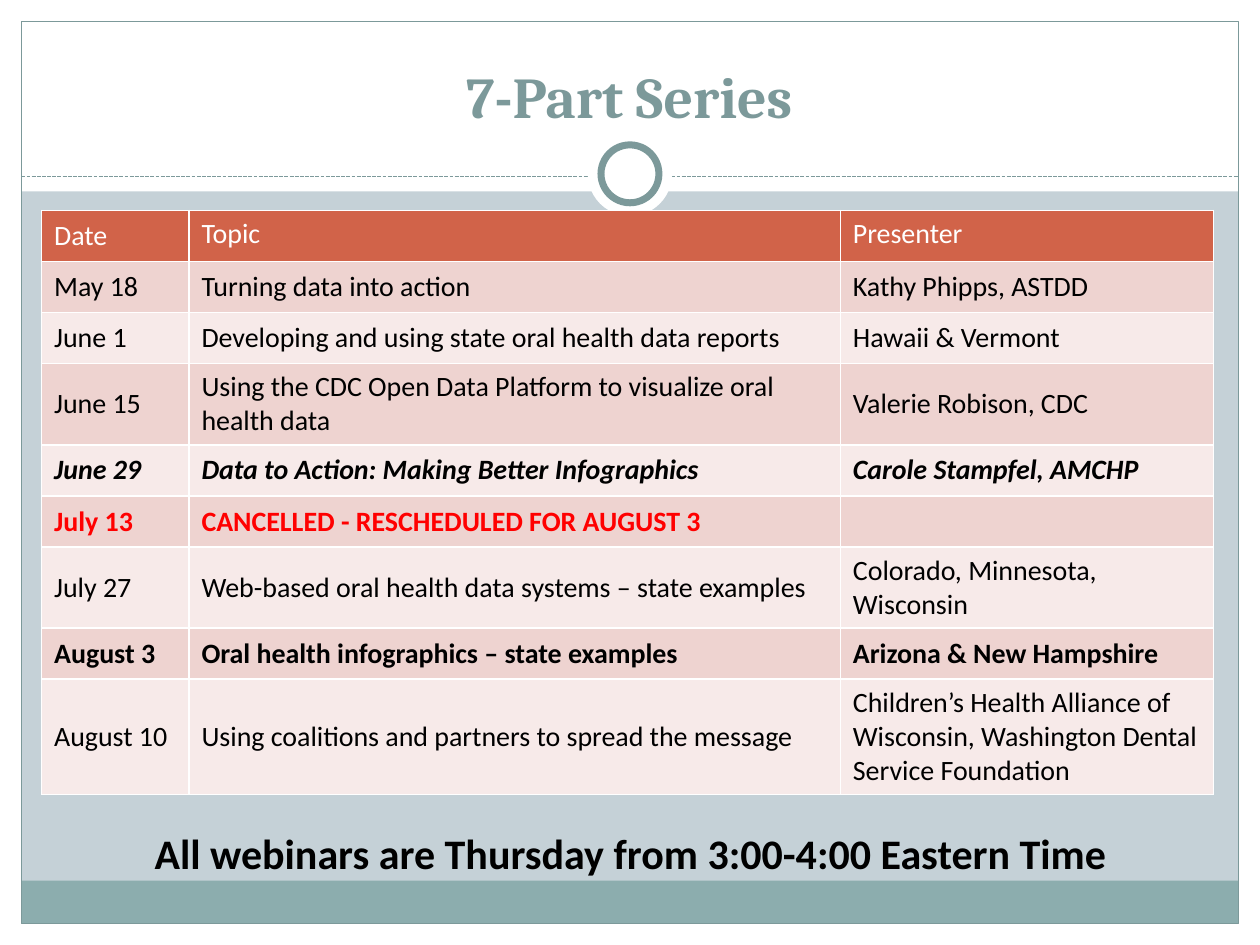
from lxml import etree
from pptx import Presentation
from pptx.dml.color import RGBColor
from pptx.enum.dml import MSO_LINE
from pptx.enum.shapes import MSO_CONNECTOR, MSO_SHAPE
from pptx.enum.text import MSO_ANCHOR, MSO_AUTO_SIZE, PP_ALIGN
from pptx.oxml import parse_xml
from pptx.oxml.ns import nsdecls, qn
from pptx.util import Inches, Pt

RECT, OVAL = MSO_SHAPE.RECTANGLE, MSO_SHAPE.OVAL
STRAIGHT, DASH = MSO_CONNECTOR.STRAIGHT, MSO_LINE.SQUARE_DOT
MIDDLE, BOTTOM, TOP = MSO_ANCHOR.MIDDLE, MSO_ANCHOR.BOTTOM, MSO_ANCHOR.TOP
CENTER, GROW = PP_ALIGN.CENTER, MSO_AUTO_SIZE.SHAPE_TO_FIT_TEXT

WHITE = RGBColor(0xFF, 0xFF, 0xFF)
BLACK = RGBColor(0, 0, 0)
RED = RGBColor(0xFF, 0, 0)
MIST = RGBColor(0xC5, 0xD1, 0xD7)
TEAL = RGBColor(0x8C, 0xAD, 0xAE)
SLATE = RGBColor(0x7C, 0x99, 0x9A)
RUST = RGBColor(0xD1, 0x63, 0x49)
ROSE = RGBColor(0xEE, 0xD3, 0xD0)
BLUSH = RGBColor(0xF7, 0xEA, 0xE9)

HEADS = ("Date", "Topic", "Presenter")
# Each row: date, topic, presenter, colour, bold, italic
ROWS = (
    ("May 18", "Turning data into action", "Kathy Phipps, ASTDD",
     BLACK, False, False),
    ("June 1", "Developing and using state oral health data reports",
     "Hawaii & Vermont", BLACK, False, False),
    ("June 15",
     "Using the CDC Open Data Platform to visualize oral health data",
     "Valerie Robison, CDC", BLACK, False, False),
    ("June 29", "Data to Action: Making Better Infographics",
     "Carole Stampfel, AMCHP", BLACK, True, True),
    ("July 13", "CANCELLED - RESCHEDULED FOR AUGUST 3", "",
     RED, True, False),
    ("July 27", "Web-based oral health data systems – state examples",
     "Colorado, Minnesota, Wisconsin", BLACK, False, False),
    ("August 3", "Oral health infographics – state examples",
     "Arizona & New Hampshire", BLACK, True, False),
    ("August 10", "Using coalitions and partners to spread the message",
     "Children’s Health Alliance of Wisconsin, Washington Dental "
     "Service Foundation", BLACK, False, False),
)


def style(para, face, size, color, bold=False, italic=False):
    font = para.font
    font.name, font.size = face, Pt(size)
    font.color.rgb = color
    font.bold, font.italic = bold, italic


def add_form(slide, kind, box, fill=None, line=None, width=0.75):
    form = slide.shapes.add_shape(kind, *map(Inches, box))
    form.shadow.inherit = False
    if fill is None:
        form.fill.background()
    else:
        form.fill.solid()
        form.fill.fore_color.rgb = fill
    if line is None:
        form.line.fill.background()
    else:
        form.line.color.rgb = line
        form.line.width = Pt(width)


def add_frame(slide, left, top, width, height):
    """Draw the white margins, footer band, outline, divider and ring."""
    edge, head, rule = 0.17, 1.52, 1.4
    right, base = left + width, top + height
    for box in ((left, base - edge, width, edge),
                (left, top, width, head),
                (left, top, edge, height),
                (right - edge, top, edge, height)):
        add_form(slide, RECT, box, WHITE)
    inner = width - 2 * edge
    add_form(slide, RECT, (left + edge, base - 0.51, inner, 0.34), TEAL)
    add_form(slide, RECT,
             (left + edge, top + edge, inner, height - 2 * edge), None, SLATE)

    line = slide.shapes.add_connector(
        STRAIGHT, Inches(left + edge), Inches(top + rule),
        Inches(right - edge), Inches(top + rule))
    line.line.color.rgb = SLATE
    line.line.width = Pt(0.75)
    line.line.dash_style = DASH
    etree.SubElement(line._element.spPr, qn("a:effectLst"))

    mid_x, mid_y = left + width / 2, top + 1.38
    for size, color in ((0.67, None), (0.46, SLATE)):
        box = (mid_x - size / 2, mid_y - size / 2, size, size)
        add_form(slide, OVAL, box, WHITE, color, 4)


def add_title(slide, left, top, width, height):
    title = slide.shapes.title
    title.left, title.top = Inches(left), Inches(top)
    title.width, title.height = Inches(width), Inches(height)
    slide.shapes._spTree.append(title._element)  # in front of the frame
    frame = title.text_frame
    frame.text = "7-Part Series"
    frame.vertical_anchor = BOTTOM
    para = frame.paragraphs[0]
    para.alignment = CENTER
    style(para, "Cambria", 33, SLATE, True)


def add_rules(cell):
    """Give a cell thin white borders."""
    props = cell._tc.get_or_add_tcPr()
    for spot, side in enumerate("LRTB"):
        props.insert(spot, parse_xml(
            f'<a:ln{side} {nsdecls("a")} w="12700"><a:solidFill>'
            f'<a:srgbClr val="{WHITE}"/></a:solidFill></a:ln{side}>'))


def add_dates(slide, left, top, width, height):
    rows = [(*HEADS, WHITE, False, False), *ROWS]
    table = slide.shapes.add_table(
        len(rows), len(HEADS), *map(Inches, (left, top, width, height))).table
    date, topic = 1.17, 5.17
    for col, size in zip(table.columns, (date, topic, width - date - topic)):
        col.width = Inches(size)
    for r, (*texts, color, bold, italic) in enumerate(rows):
        table.rows[r].height = Inches(height / len(rows))
        fill = RUST if r == 0 else ROSE if r % 2 else BLUSH
        for c, text in enumerate(texts):
            cell = table.cell(r, c)
            cell.text = text
            cell.vertical_anchor = TOP if r == 0 and c else MIDDLE
            cell.fill.solid()
            cell.fill.fore_color.rgb = fill
            add_rules(cell)
            style(cell.text_frame.paragraphs[0], "Calibri", 16,
                  color, bold, italic)


def add_note(slide, left, top, width, height):
    note = slide.shapes.add_textbox(
        *map(Inches, (left, top, width, height)))
    frame = note.text_frame
    frame.word_wrap = False
    frame.auto_size = GROW
    para = frame.paragraphs[0]
    para.text = "All webinars are Thursday from 3:00-4:00 Eastern Time"
    para.alignment = CENTER
    style(para, "Calibri", 24, BLACK, True)


def main():
    deck = Presentation()
    deck.slide_width, deck.slide_height = Inches(10), Inches(7.5)
    slide = deck.slides.add_slide(deck.slide_layouts[5])
    slide.background.fill.solid()
    slide.background.fill.fore_color.rgb = MIST
    add_frame(slide, 0, 0, 10, 7.5)
    add_title(slide, 0.33, 0.25, 9.33, 0.83)
    add_dates(slide, 0.33, 1.67, 9.3, 3.65)
    add_note(slide, 1.09, 6.52, 7.83, 0.5)
    deck.save("out.pptx")


if __name__ == "__main__":
    main()
